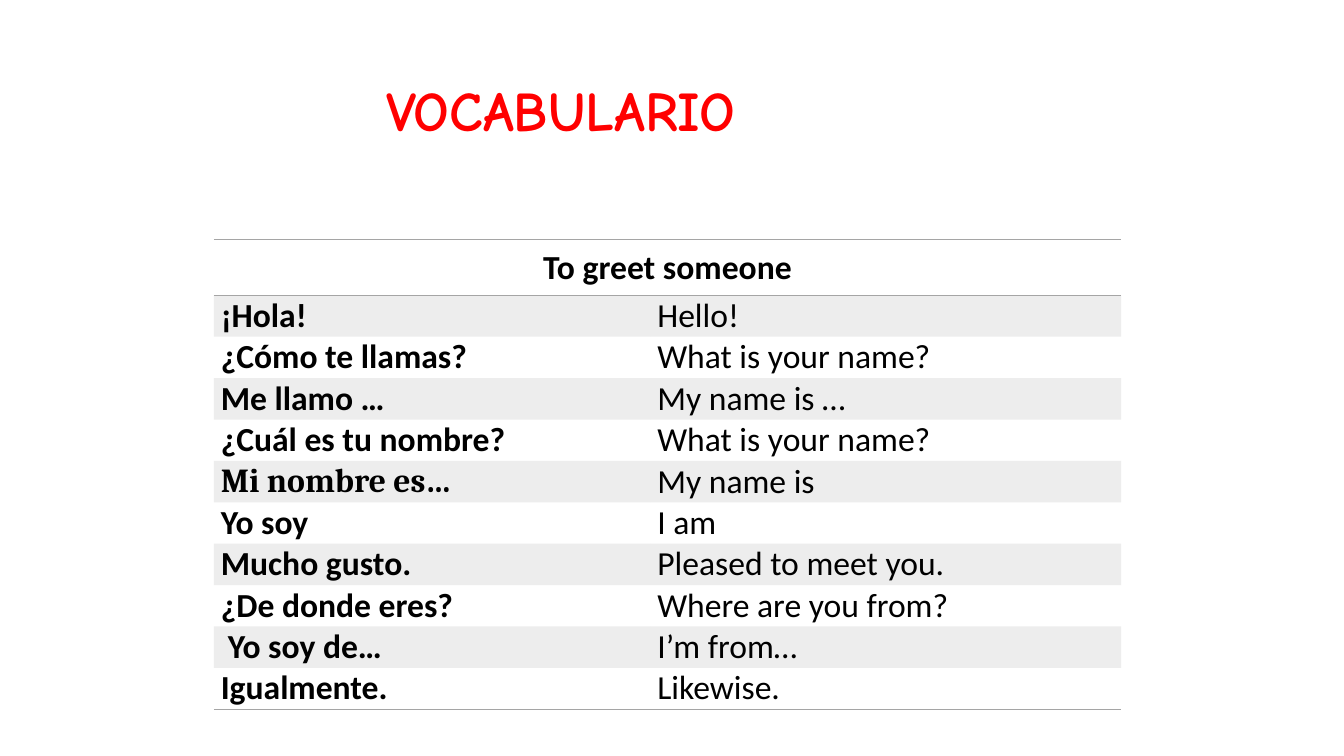
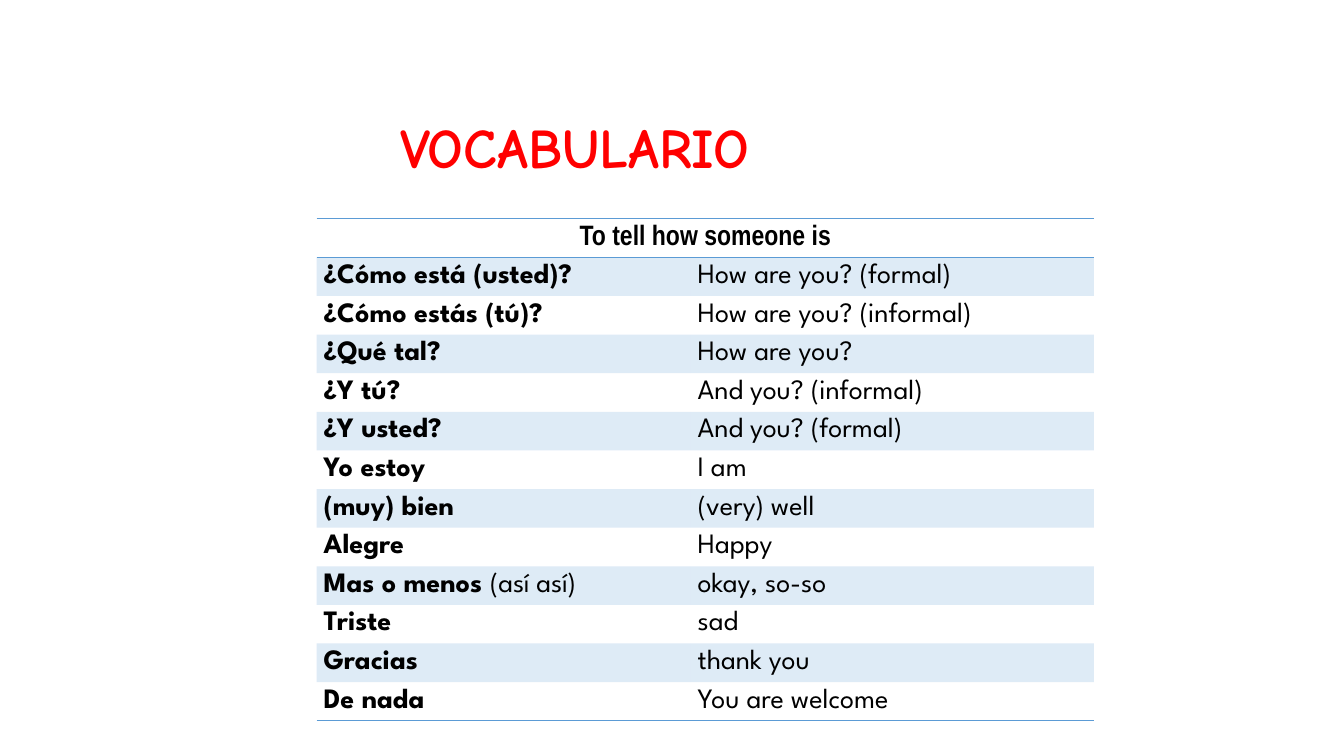
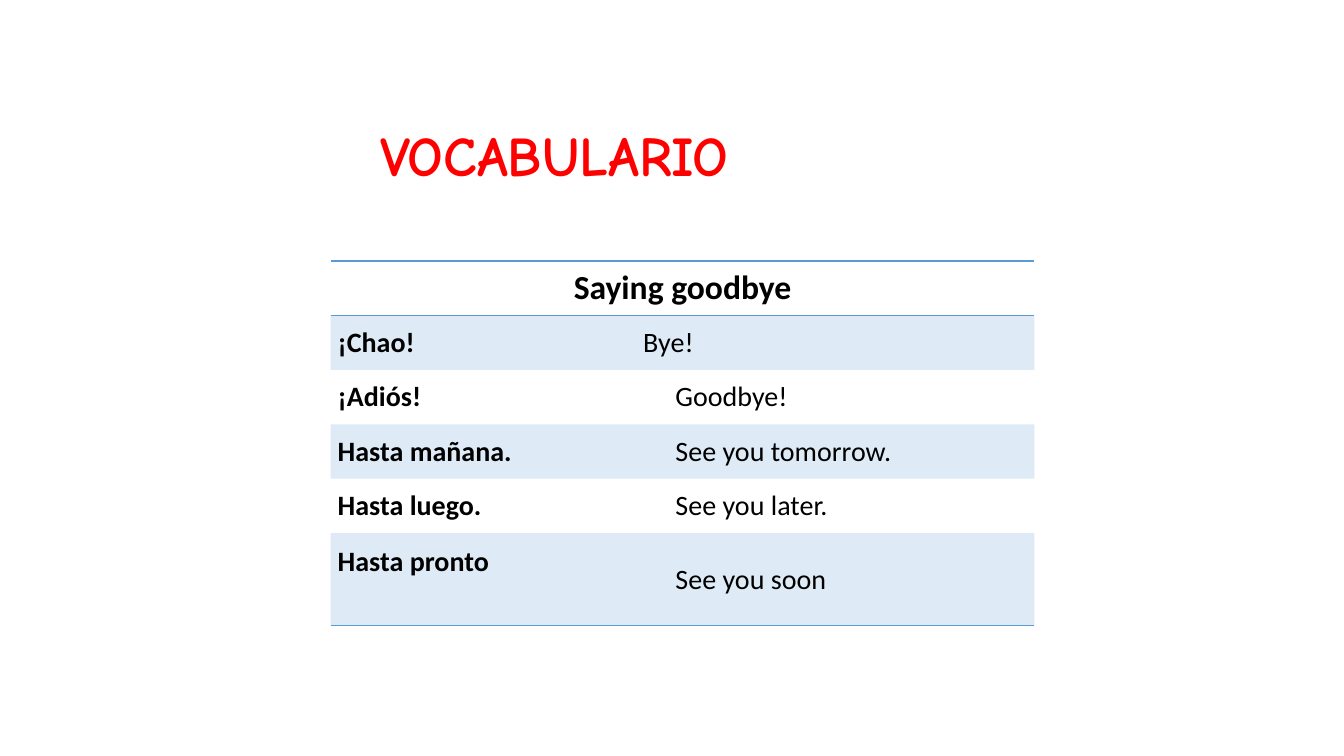
from lxml import etree
from pptx import Presentation
from pptx.dml.color import RGBColor
from pptx.enum.text import MSO_ANCHOR, MSO_AUTO_SIZE, PP_ALIGN
from pptx.oxml.ns import qn
from pptx.util import Inches, Pt

MIDDLE = MSO_ANCHOR.MIDDLE
NO_AUTOFIT = MSO_AUTO_SIZE.NONE
LEFT, CENTER = PP_ALIGN.LEFT, PP_ALIGN.CENTER

RED, BLACK, GRAY, BLUE = "FF0000", "000000", "A5A5A5", "5B9BD5"
TITLE_FONT = "Comic Neue"
TITLE_ONLY = 5
PLAIN_TABLE = "{2D5ABB26-0587-4C30-8999-92F81FD0307C}"
CELL_INSET = 0.07

GREETINGS = [
    ("¡Hola!", "Hello!"),
    ("¿Cómo te llamas?", "What is your name?"),
    ("Me llamo …", "My name is …"),
    ("¿Cuál es tu nombre?", "What is your name?"),
    ("Mi nombre es…", "My name is"),
    ("Yo soy", "I am"),
    ("Mucho gusto.", "Pleased to meet you."),
    ("¿De donde eres?", "Where are you from?"),
    ("Yo soy de…", "I’m from…"),
    ("Igualmente.", "Likewise."),
]
FEELINGS = [
    ("¿Cómo está (usted)?", "How are you? (formal)"),
    ("¿Cómo estás (tú)?", "How are you? (informal)"),
    ("¿Qué tal?", "How are you?"),
    ("¿Y tú?", "And you? (informal)"),
    ("¿Y usted?", "And you? (formal)"),
    ("Yo estoy", "I am"),
    ("(muy) bien", "(very) well"),
    ("Alegre", "Happy"),
    ("Mas o menos ", "okay, so-so"),
    ("Triste", "sad"),
    ("Gracias", "thank you"),
    ("De nada", "You are welcome"),
]
GOODBYES = [
    ("¡Chao!", ""),
    ("¡Adiós!", "Goodbye!"),
    ("Hasta mañana.", "See you tomorrow."),
    ("Hasta luego.", "See you later."),
    ("Hasta pronto", "See you soon"),
]


def rgb(color):
    return RGBColor.from_string(color)


def format_run(run, font, size, color=BLACK, bold=True):
    run.font.name = font
    run.font.size = Pt(size)
    run.font.bold = bold
    run.font.color.rgb = rgb(color)


def add_text(cell, text, font, size, bold):
    run = cell.text_frame.paragraphs[0].add_run()
    run.text = text
    format_run(run, font, size, bold=bold)


def add_title(slide, top, height, indent, drop=0):
    """Place the shared red title; drop lowers the text inside its box."""
    title = slide.shapes.title
    title.left, title.top = Inches(0.92), Inches(top)
    title.width, title.height = Inches(11.5), Inches(height)
    frame = title.text_frame
    frame.text = "VOCABULARIO"
    frame.auto_size = NO_AUTOFIT
    frame.vertical_anchor = MIDDLE
    frame.margin_left = Inches(0.1 + indent)
    frame.margin_top = Inches(0.05 + drop)
    heading = frame.paragraphs[0]
    heading.alignment = LEFT
    heading.line_spacing = 0.9
    format_run(heading.runs[0], TITLE_FONT, 40, RED)


def add_rules(cell, sides, color):
    """Draw 1 pt lines on the given sides; they precede the fill in the XML."""
    properties = cell._tc.get_or_add_tcPr()
    for position, side in enumerate(sides):
        line = etree.Element(qn("a:ln" + side), w=str(Pt(1)))
        fill = etree.SubElement(line, qn("a:solidFill"))
        etree.SubElement(fill, qn("a:srgbClr"), val=color)
        properties.insert(position, line)


def tint(cell, color):
    cell.fill.solid()
    cell.fill.fore_color.rgb = rgb(color)
    for shade in cell._tc.tcPr.iter(qn("a:srgbClr")):
        etree.SubElement(shade, qn("a:alpha"), val="20000")


def add_vocabulary(slide, left, top, widths, heights, heading, entries,
                   accent, heading_style, body_style):
    """Banded two-column word list under a merged heading."""
    frame = slide.shapes.add_table(
        len(heights), 2, Inches(left), Inches(top),
        Inches(sum(widths)), Inches(sum(heights)))
    for style_id in frame._element.iter(qn("a:tableStyleId")):
        style_id.text = PLAIN_TABLE
    table = frame.table
    table.first_row = table.horz_banding = False
    for column, width in zip(table.columns, widths):
        column.width = Inches(width)
    for row, height in zip(table.rows, heights):
        row.height = Inches(height)

    # Text
    table.cell(0, 0).merge(table.cell(0, 1))
    add_text(table.cell(0, 0), heading, *heading_style, True)
    table.cell(0, 0).text_frame.paragraphs[0].alignment = CENTER
    for number, (spanish, english) in enumerate(entries, 1):
        add_text(table.cell(number, 0), spanish, *body_style, True)
        if english:
            add_text(table.cell(number, 1), english, *body_style, False)

    # Insets, bands and rules
    last = len(heights) - 1
    for number, row in enumerate(table.rows):
        for cell in row.cells:
            cell.vertical_anchor = MIDDLE
            cell.margin_left = cell.margin_right = Inches(CELL_INSET)
            cell.margin_top = cell.margin_bottom = 0
            if number % 2:
                tint(cell, accent)
            else:
                cell.fill.background()
            if number == 0:
                add_rules(cell, "TB", accent)
            elif number == last:
                add_rules(cell, "B", accent)
    return table


def build_greetings(slide):
    add_title(slide, 0.4, 1.45, 2.81)
    table = add_vocabulary(
        slide, 2.12, 2.38, (4.33, 4.67), [0.55] + [4.11 / 10] * 10,
        "To greet someone", GREETINGS, GRAY, ("Calibri", 24), ("Calibri", 24))
    my_name = table.cell(5, 0).text_frame.paragraphs[0].runs[0]
    my_name.font.name = "Cambria"
    table.cell(9, 0).margin_left = Inches(2 * CELL_INSET)


def build_feelings(slide):
    body = ("League Spartan", 20)
    add_title(slide, 0.4, 1.45, 2.95, drop=0.73)
    table = add_vocabulary(
        slide, 3.14, 2.17, (3.71, 4), [4.98 / 13] * 13,
        "To tell how someone is", FEELINGS, BLUE, ("Arial Narrow", 20), body)
    add_text(table.cell(9, 0), "(así así)", *body, False)


def build_goodbyes(slide):
    body = ("Calibri", 20)
    add_title(slide, 0.93, 1.29, 2.75)
    table = add_vocabulary(
        slide, 3.28, 2.59, (3.35, 3.63), [0.54] * 5 + [0.92],
        "Saying goodbye", GOODBYES, BLUE, ("Calibri", 24), body)
    # The first pair shares one merged cell, split by a tab stop
    bye = table.cell(1, 0)
    bye.merge(table.cell(1, 1))
    add_text(bye, "\tBye!", *body, False)
    properties = bye.text_frame.paragraphs[0]._p.get_or_add_pPr()
    tabs = etree.SubElement(properties, qn("a:tabLst"))
    etree.SubElement(tabs, qn("a:tab"), pos=str(Inches(3.03)), algn="l")
    # The last Spanish phrase sits above the middle of its row
    table.cell(5, 0).margin_bottom = Inches(0.34)


def main():
    deck = Presentation()
    deck.slide_width, deck.slide_height = Inches(13.33), Inches(7.5)
    for build in (build_greetings, build_feelings, build_goodbyes):
        build(deck.slides.add_slide(deck.slide_layouts[TITLE_ONLY]))
    deck.save("out.pptx")


if __name__ == "__main__":
    main()
